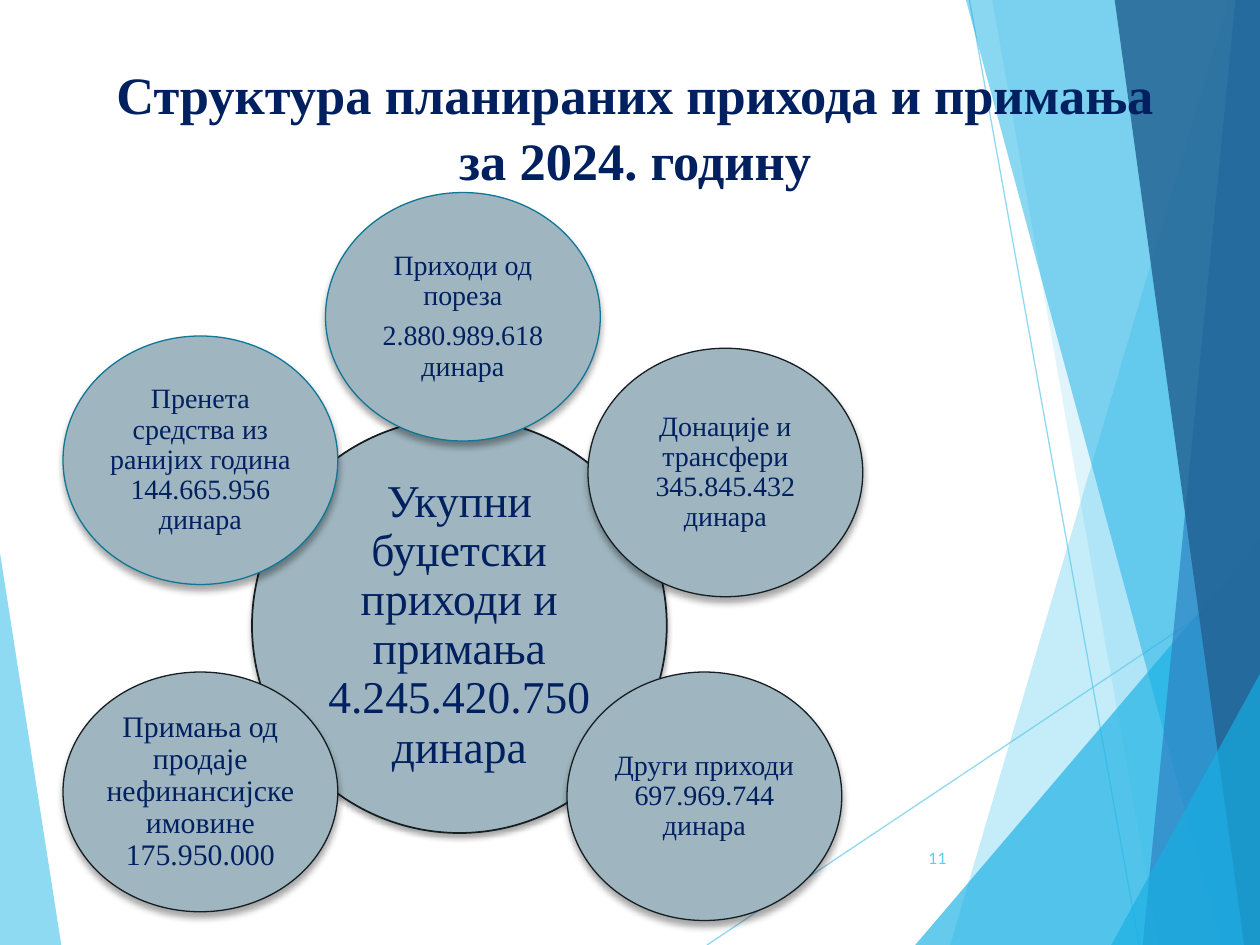
from dataclasses import dataclass

from lxml.etree import SubElement
from pptx import Presentation
from pptx.dml.color import RGBColor
from pptx.enum.shapes import MSO_CONNECTOR, MSO_SHAPE
from pptx.enum.text import MSO_ANCHOR, PP_ALIGN
from pptx.oxml.ns import qn
from pptx.util import Pt


@dataclass(frozen=True)
class Theme:
    sky: str = "5FCBEF"
    cyan: str = "17B0E4"
    blue: str = "2E83C3"
    deep: str = "226292"
    navy: str = "002060"
    bubble: str = "9FB6C0"
    dark_line: str = "161E22"
    teal_line: str = "0F7698"
    serif: str = "Times New Roman"
    sans: str = "Lato"
    title_size: int = 30
    total_size: int = 26
    large_size: int = 17
    item_size: int = 16
    number_size: int = 9


THEME = Theme()
WIDTH, HEIGHT = 720, 540

TITLE = "Структура планираних прихода и примања за 2024. годину"
PAGE_NUMBER = "11"

# Corner points, colour, opacity in percent
LEFT_WEDGE = ([(0, 316), (35, HEIGHT), (0, HEIGHT)], THEME.sky, 70)
RIGHT_FACETS = [
    ([(702, 0), (543, HEIGHT), (WIDTH, HEIGHT), (WIDTH, 0)], THEME.sky, 36),
    ([(567, 0), (662, HEIGHT), (WIDTH, HEIGHT), (WIDTH, 0)], THEME.sky, 20),
    ([(523, HEIGHT), (WIDTH, 309), (WIDTH, HEIGHT)], THEME.cyan, 66),
    ([(552, 0), (698, HEIGHT), (WIDTH, HEIGHT), (WIDTH, 0)], THEME.cyan, 50),
    ([(706, 0), (653, HEIGHT), (WIDTH, HEIGHT), (WIDTH, 0)], THEME.blue, 70),
    ([(637, 0), (711, HEIGHT), (WIDTH, HEIGHT), (WIDTH, 0)], THEME.deep, 82),
    ([(635, HEIGHT), (WIDTH, 385), (WIDTH, HEIGHT)], THEME.cyan, 66),
]
RAYS = [(404, HEIGHT, WIDTH, 329), (554, 0, 651, HEIGHT)]

TOTAL = (144, 239, 237, 237)
TOTAL_TEXT = ["Укупни буџетски приходи и примања 4.245.420.750 динара"]

# Left, top, height, line colour, type size, paragraphs
BUBBLE_WIDTH = 157
BUBBLES = [
    (186, 110, 142, THEME.teal_line, THEME.item_size,
     ["Приходи од пореза", "2.880.989.618 динара"]),
    (336, 199, 142, THEME.dark_line, THEME.item_size,
     ["Донације и трансфери 345.845.432 динара"]),
    (324, 384, 142, THEME.dark_line, THEME.item_size,
     ["Други приходи 697.969.744 динара"]),
    (36, 384, 137, THEME.dark_line, THEME.large_size,
     ["Примања од продаје нефинансијске имовине 175.950.000"]),
    (36, 192, 142, THEME.teal_line, THEME.item_size,
     ["Пренета средства из ранијих година 144.665.956 динара"]),
]


def points(*values):
    return [Pt(value) for value in values]


def color(hex_value):
    return RGBColor.from_string(hex_value)


def set_opacity(element, percent):
    """Make the first RGB colour under element partly transparent."""
    rgb = next(element.iter(qn("a:srgbClr")))
    SubElement(rgb, qn("a:alpha"), val=str(percent * 1000))


def add_facet(page, corners, fill, opacity):
    corners = [points(*corner) for corner in corners]
    builder = page.shapes.build_freeform(*corners[0])
    builder.add_line_segments(corners[1:], close=True)
    facet = builder.convert_to_shape()
    facet.shadow.inherit = False
    facet.fill.solid()
    facet.fill.fore_color.rgb = color(fill)
    set_opacity(facet.fill._xPr, opacity)
    facet.line.fill.background()


def add_ray(page, ends):
    ray = page.shapes.add_connector(MSO_CONNECTOR.STRAIGHT, *points(*ends))
    ray.line.width = Pt(0.75)
    ray.line.color.rgb = color(THEME.sky)
    properties = ray._element.spPr
    set_opacity(properties, 70)
    SubElement(properties, qn("a:effectLst"))


def write(shape, texts, size, font=THEME.serif, ink=THEME.navy,
          align=PP_ALIGN.CENTER, bold=False, spacing=1.0, after=0):
    frame = shape.text_frame
    frame.word_wrap = True
    frame.text = "\n".join(texts)
    for para in frame.paragraphs:
        para.alignment = align
        para.line_spacing = spacing
        para.space_after = Pt(after)
        para.font.name = font
        para.font.size = Pt(size)
        para.font.bold = bold
        para.font.color.rgb = color(ink)
    return frame


def add_bubble(page, area, line, line_width, texts, size, inset, blur, distance):
    bubble = page.shapes.add_shape(MSO_SHAPE.OVAL, *points(*area))
    bubble.fill.solid()
    bubble.fill.fore_color.rgb = color(THEME.bubble)
    bubble.line.color.rgb = color(line)
    bubble.line.width = Pt(line_width)

    bubble.shadow.inherit = False
    effects = bubble._element.spPr.find(qn("a:effectLst"))
    shadow = SubElement(effects, qn("a:outerShdw"), blurRad=str(Pt(blur)),
                        dist=str(Pt(distance)), dir="5400000", rotWithShape="0")
    SubElement(shadow, qn("a:srgbClr"), val="000000")
    set_opacity(shadow, 35)

    frame = write(bubble, texts, size, spacing=0.9, after=round(size * 0.35, 1))
    frame.vertical_anchor = MSO_ANCHOR.MIDDLE
    frame.margin_left = frame.margin_right = Pt(inset)
    frame.margin_top = frame.margin_bottom = Pt(inset)


def main():
    deck = Presentation()
    deck.slide_width, deck.slide_height = points(WIDTH, HEIGHT)
    page = deck.slides.add_slide(deck.slide_layouts[6])

    add_facet(page, *LEFT_WEDGE)
    for ray in RAYS:
        add_ray(page, ray)
    for facet in RIGHT_FACETS:
        add_facet(page, *facet)

    number = page.shapes.add_textbox(*points(508, 476, 40, 29))
    frame = write(number, [PAGE_NUMBER], THEME.number_size, THEME.sans,
                  THEME.sky, PP_ALIGN.RIGHT)
    frame.vertical_anchor = MSO_ANCHOR.MIDDLE

    add_bubble(page, TOTAL, THEME.dark_line, 1, TOTAL_TEXT, THEME.total_size,
               inset=2.6, blur=3, distance=2)
    for left, top, height, line, size, texts in BUBBLES:
        add_bubble(page, (left, top, BUBBLE_WIDTH, height), line, 0.75, texts,
                   size, inset=1.6, blur=4, distance=3)

    title = page.shapes.add_textbox(*points(48, 30, 630, 80))
    write(title, [TITLE], THEME.title_size, bold=True, spacing=1.05)

    deck.save("out.pptx")


if __name__ == "__main__":
    main()
